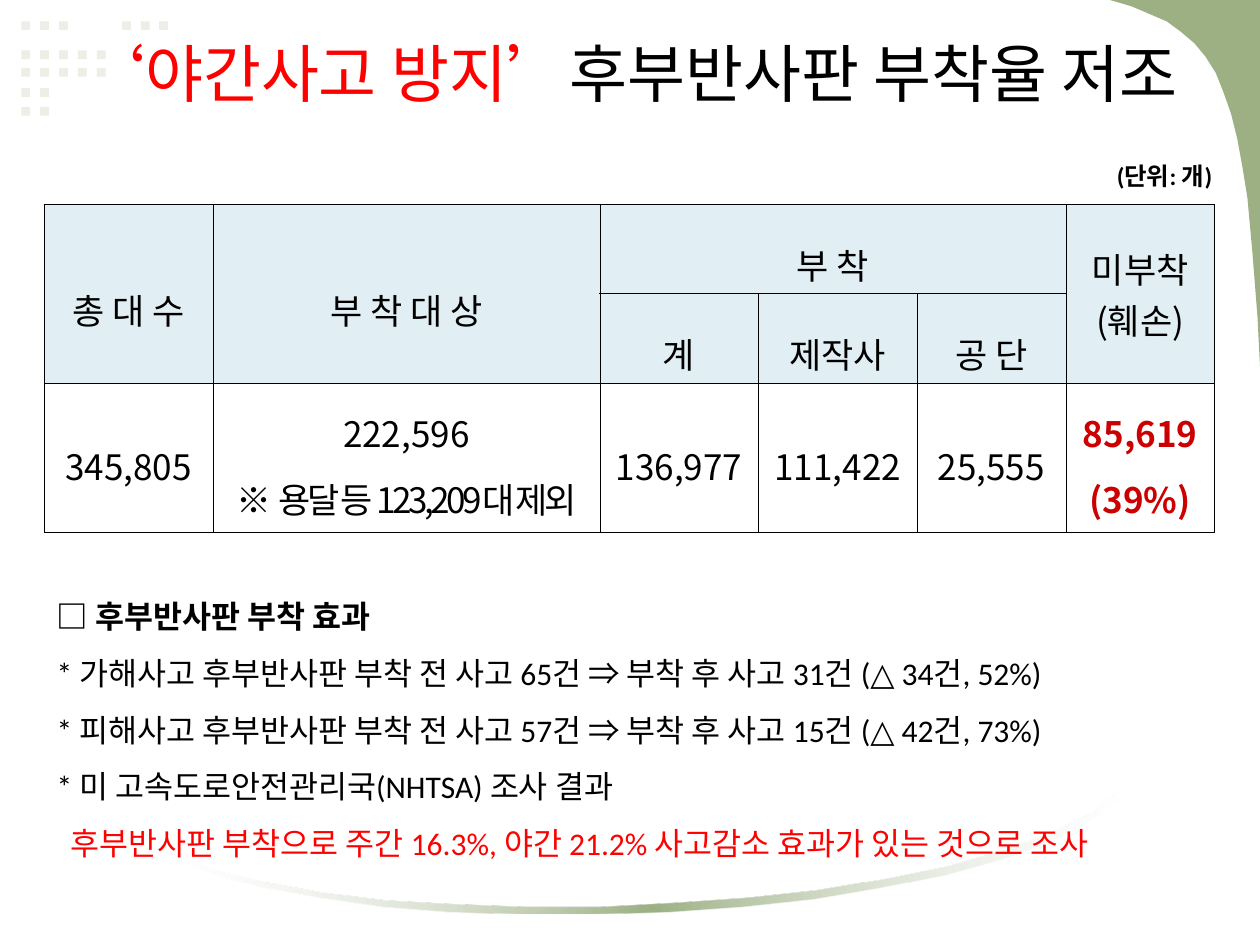
from dataclasses import dataclass
from typing import Optional

from lxml import etree
from pptx import Presentation
from pptx.dml.color import RGBColor
from pptx.enum import shapes, text
from pptx.oxml import ns
from pptx.util import Pt


@dataclass(frozen=True)
class Theme:
    black: str = "000000"
    red: str = "FF0000"
    dark_red: str = "CC0000"
    white: str = "FFFFFF"
    green: str = "9CB084"
    dot: str = "EBEFE6"
    header: str = "E1EFF4"
    latin: str = "Calibri"
    korean: str = "Noto Sans CJK KR"
    title: float = 36
    table: float = 20
    body: float = 18
    unit: float = 14


T = Theme()


@dataclass(frozen=True)
class Run:
    text: str
    size: float
    color: str = T.black
    bold: bool = False
    font: str = T.korean
    spacing: Optional[float] = None


@dataclass(frozen=True)
class Para:
    runs: tuple
    align: text.PP_ALIGN = text.PP_ALIGN.LEFT
    line: float = 1.0
    indent: float = 0


@dataclass(frozen=True)
class Cell:
    row: int
    col: int
    paras: tuple
    rows: int = 1
    cols: int = 1


def rgb(color: str) -> RGBColor:
    return RGBColor.from_string(color)


def write(tf, paras) -> None:
    for i, para in enumerate(paras):
        p = tf.paragraphs[0] if i == 0 else tf.add_paragraph()
        p.alignment = para.align
        p.line_spacing = para.line
        if para.indent:
            p._p.get_or_add_pPr().set("marL", str(Pt(para.indent)))
        for run in para.runs:
            r = p.add_run()
            r.text = run.text
            r.font.name, r.font.size, r.font.bold = run.font, Pt(run.size), run.bold
            r.font.color.rgb = rgb(run.color)
            rpr = r._r.get_or_add_rPr()
            etree.SubElement(rpr, ns.qn("a:ea")).set("typeface", T.korean)
            if run.spacing is not None:
                rpr.set("spc", str(int(run.spacing * 100)))


def add_text(s, box, paras, anchor=text.MSO_ANCHOR.TOP, grow=True) -> None:
    tf = s.shapes.add_textbox(*map(Pt, box)).text_frame
    tf.word_wrap = True
    tf.vertical_anchor = anchor
    if grow:
        tf.auto_size = text.MSO_AUTO_SIZE.SHAPE_TO_FIT_TEXT
    write(tf, paras)


def add_outline(s, points):
    (x, y), *rest = points
    builder = s.shapes.build_freeform(Pt(x), Pt(y))
    builder.add_line_segments([(Pt(a), Pt(b)) for a, b in rest], close=True)
    sp = builder.convert_to_shape()
    sp.shadow.inherit = False
    sp.line.fill.background()
    return sp


def fade(sp, stops) -> None:
    """Fill with a horizontal gradient of (position, colour, opacity) stops."""
    sp.fill.gradient()
    sp.fill.gradient_angle = 0
    gs_list = sp._element.spPr.find(".//" + ns.qn("a:gsLst"))
    for gs in list(gs_list):
        gs_list.remove(gs)
    for pos, color, opacity in stops:
        gs = etree.SubElement(gs_list, ns.qn("a:gs"), pos=str(pos * 1000))
        clr = etree.SubElement(gs, ns.qn("a:srgbClr"), val=color)
        etree.SubElement(clr, ns.qn("a:alpha"), val=str(opacity * 1000))


def add_borders(cell, width: float = 0.25) -> None:
    tcpr = cell._tc.get_or_add_tcPr()
    for i, side in enumerate(("lnL", "lnR", "lnT", "lnB")):
        ln = etree.Element(ns.qn("a:" + side), w=str(Pt(width)))
        fill = etree.SubElement(ln, ns.qn("a:solidFill"))
        etree.SubElement(fill, ns.qn("a:srgbClr"), val=T.black)
        tcpr.insert(i, ln)


def add_table(s, left, top, widths, heights, cells) -> None:
    frame = s.shapes.add_table(len(heights), len(widths), Pt(left), Pt(top),
                               Pt(sum(widths)), Pt(sum(heights)))
    table = frame.table
    table.first_row = table.horz_banding = False
    for col, width in zip(table.columns, widths):
        col.width = Pt(width)
    for i, (row, height) in enumerate(zip(table.rows, heights)):
        row.height = Pt(height)
        for cell in row.cells:
            if i < 2:
                cell.fill.solid()
                cell.fill.fore_color.rgb = rgb(T.header)
            else:
                cell.fill.background()
            cell.margin_left = cell.margin_right = Pt(1.4)
            cell.margin_top = cell.margin_bottom = Pt(1.4)
            cell.vertical_anchor = text.MSO_ANCHOR.MIDDLE
            add_borders(cell)
    for c in cells:
        cell = table.cell(c.row, c.col)
        if c.rows * c.cols > 1:
            cell.merge(table.cell(c.row + c.rows - 1, c.col + c.cols - 1))
        write(cell.text_frame, c.paras)


def centred(label: str, line: float, **style) -> Para:
    return Para((Run(label, T.table, **style),), text.PP_ALIGN.CENTER, line)


def head(label: str) -> tuple:
    return (centred(label, 1.6),)


def value(label: str, **style) -> Para:
    return centred(label, 1.3, **style)


prs = Presentation()
prs.slide_width, prs.slide_height = Pt(720), Pt(540)
s = prs.slides.add_slide(prs.slide_layouts[6])

# Dot pattern, top left
LEFT_DOTS = [12.2 + 10.8 * i for i in range(5)]
RIGHT_DOTS = [69.8, 80.6, 91]
DOT_ROWS = ((12.2, LEFT_DOTS[:3] + RIGHT_DOTS), (28.8, LEFT_DOTS), (38.9, LEFT_DOTS),
            (50.4, LEFT_DOTS[:2]), (61.2, LEFT_DOTS[:2]))
for y, xs in DOT_ROWS:
    for x in xs:
        dot = s.shapes.add_shape(shapes.MSO_SHAPE.RECTANGLE, Pt(x), Pt(y), Pt(5), Pt(5))
        dot.shadow.inherit = False
        dot.fill.solid()
        dot.fill.fore_color.rgb = rgb(T.dot)
        dot.line.fill.background()

# Green corner and fading arc
corner = add_outline(s, [
    (634.3, 0), (646.6, 3.6), (656.6, 7.9), (666.7, 12.2), (674.6, 18), (682.6, 24.8),
    (688.9, 32.4), (694.8, 41.8), (699.1, 52.6), (703.4, 64.8), (707, 79.2), (709.9, 95),
    (712.8, 113), (715.7, 144.7), (718.6, 181.4), (720, 209.5), (720, 0)])
corner.fill.solid()
corner.fill.fore_color.rgb = rgb(T.green)

ARC_LOWER = [
    (642.2, 450), (642.2, 455), (624.2, 468), (601.2, 480.2), (572.4, 491), (540, 499.7),
    (504, 506.9), (465.1, 513.4), (424.1, 517.7), (382.3, 520.6), (339.8, 522), (298.1, 522),
    (257, 520.6), (218.9, 517.7), (183.6, 512.6), (151.2, 506.9), (123.8, 499.7), (102.2, 491)]
ARC_UPPER = [
    (102.2, 488.9), (124.6, 497.5), (152.6, 504), (185, 509.8), (221, 514.1), (259.9, 516.2),
    (300.2, 517.7), (342.7, 517.7), (384.5, 515.5), (427, 512.6), (467.3, 508.3),
    (506.2, 501.8), (542.2, 494.6), (574.6, 485.3), (602.6, 475.2), (625, 463.7)]
fade(add_outline(s, ARC_LOWER + ARC_UPPER),
     ((0, T.white, 30), (50, T.green, 100), (100, T.white, 30)))

# Title
add_text(s, (0, 0, 720, 82.8), [Para((
    Run("‘야간사고 방지’", T.title, T.red),
    Run("후부반사판 부착율 저조", T.title)), text.PP_ALIGN.CENTER)],
    text.MSO_ANCHOR.MIDDLE, grow=False)

# Table of plate counts
note = Para((Run("※ ", T.table, spacing=-0.4),
             Run("용달 등 123,209대 제외", T.table, spacing=-2)), text.PP_ALIGN.CENTER, 1.3)
missing = {"color": T.dark_red, "bold": True}
add_table(s, 25.2, 116.8, (96.5, 221, 90.7, 90.7, 85, 85), (51, 51, 85.5), [
    Cell(0, 0, head("총 대 수"), rows=2),
    Cell(0, 1, head("부 착 대 상"), rows=2),
    Cell(0, 2, head("부 착"), cols=3),
    Cell(0, 5, (centred("미부착", 1), centred("(훼손)", 1)), rows=2),
    Cell(1, 2, head("계")),
    Cell(1, 3, head("제작사")),
    Cell(1, 4, head("공 단")),
    Cell(2, 0, (value("345,805"),)),
    Cell(2, 1, (value("222,596"), note)),
    Cell(2, 2, (value("136,977"),)),
    Cell(2, 3, (value("111,422"),)),
    Cell(2, 4, (value("25,555"),)),
    Cell(2, 5, (value("85,619", **missing), value("(39%)", **missing))),
])

# Unit label
add_text(s, (586.8, 88.6, 113, 24.5), [Para(
    (Run("(단위: 개)", T.unit, bold=True, font=T.latin),), text.PP_ALIGN.RIGHT)])

# Effects of fitting the plates
FINDINGS = ("* 가해사고 후부반사판 부착 전 사고 65건 ⇒ 부착 후 사고 31건 (△ 34건, 52%)",
            "* 피해사고 후부반사판 부착 전 사고 57건 ⇒ 부착 후 사고 15건 (△ 42건, 73%)",
            "* 미 고속도로안전관리국(NHTSA) 조사 결과")
RESULT = "후부반사판 부착으로 주간 16.3%, 야간 21.2% 사고감소 효과가 있는 것으로 조사"
add_text(s, (25.2, 326.9, 668.9, 170.6), [
    Para((Run("□ 후부반사판 부착 효과", T.body, bold=True, font=T.latin),), line=1.5),
    *(Para((Run(f, T.body, font=T.latin),), line=1.5) for f in FINDINGS),
    Para((Run(RESULT, T.body, T.red, font=T.latin),), line=1.5, indent=8.2)])

prs.save("out.pptx")
